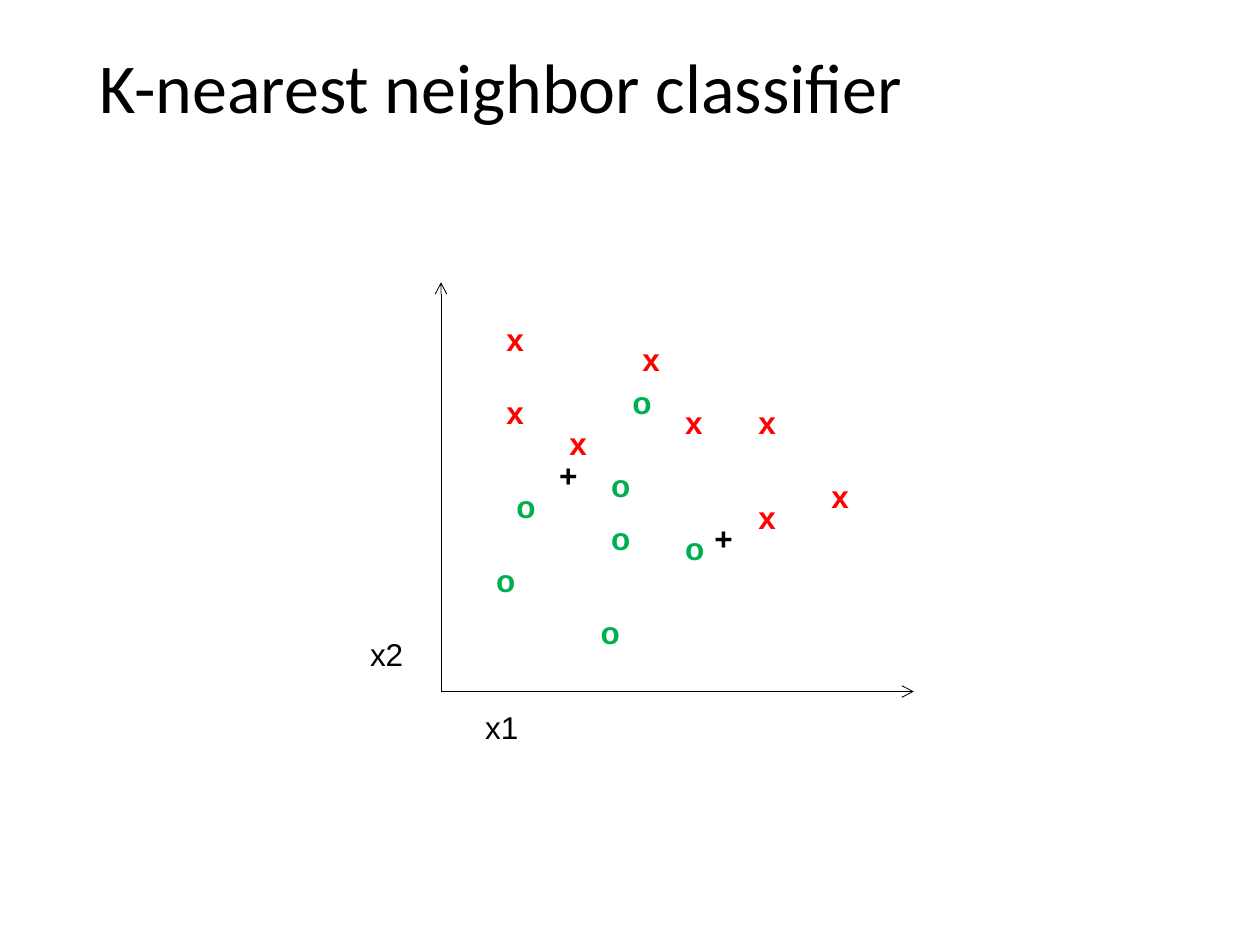
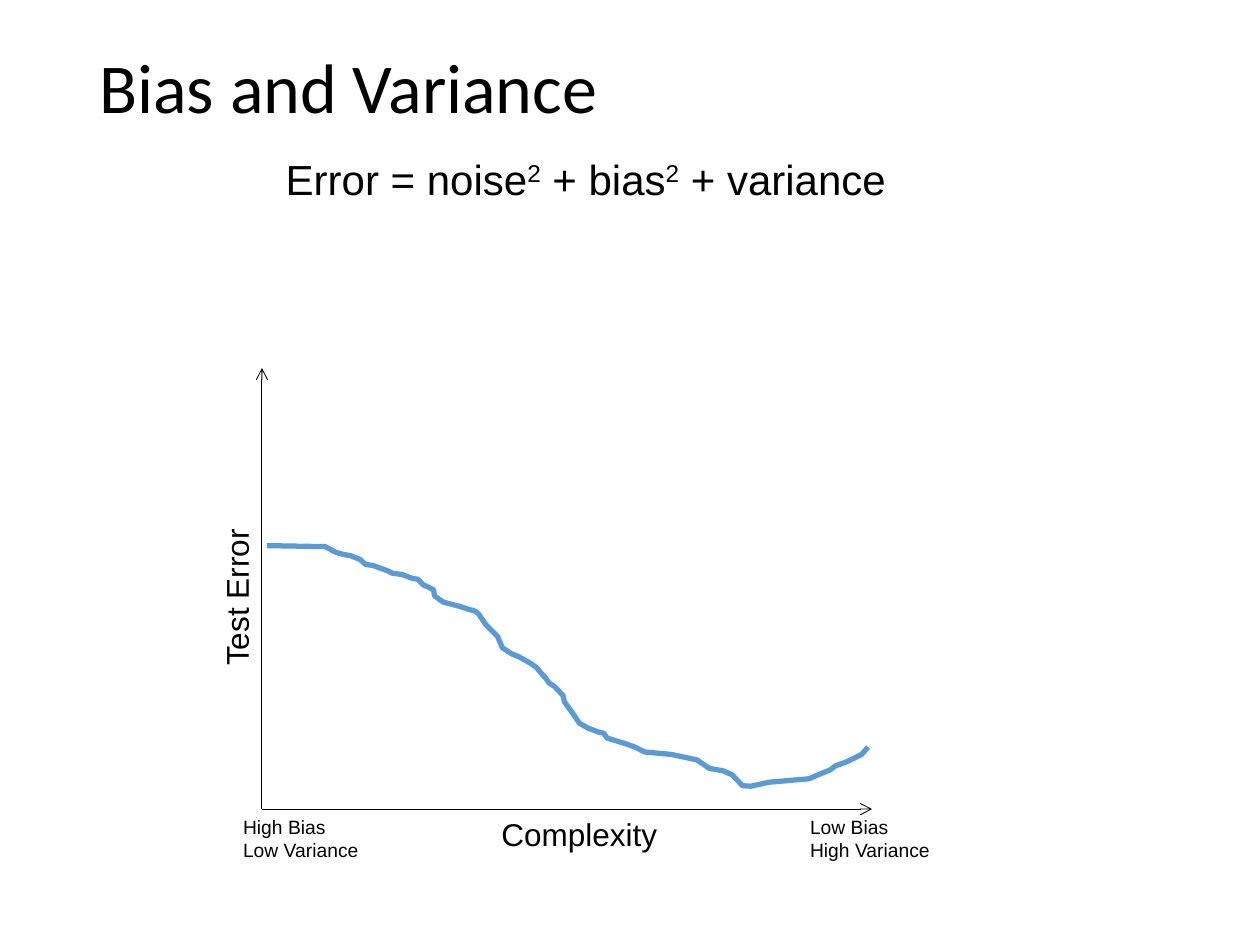
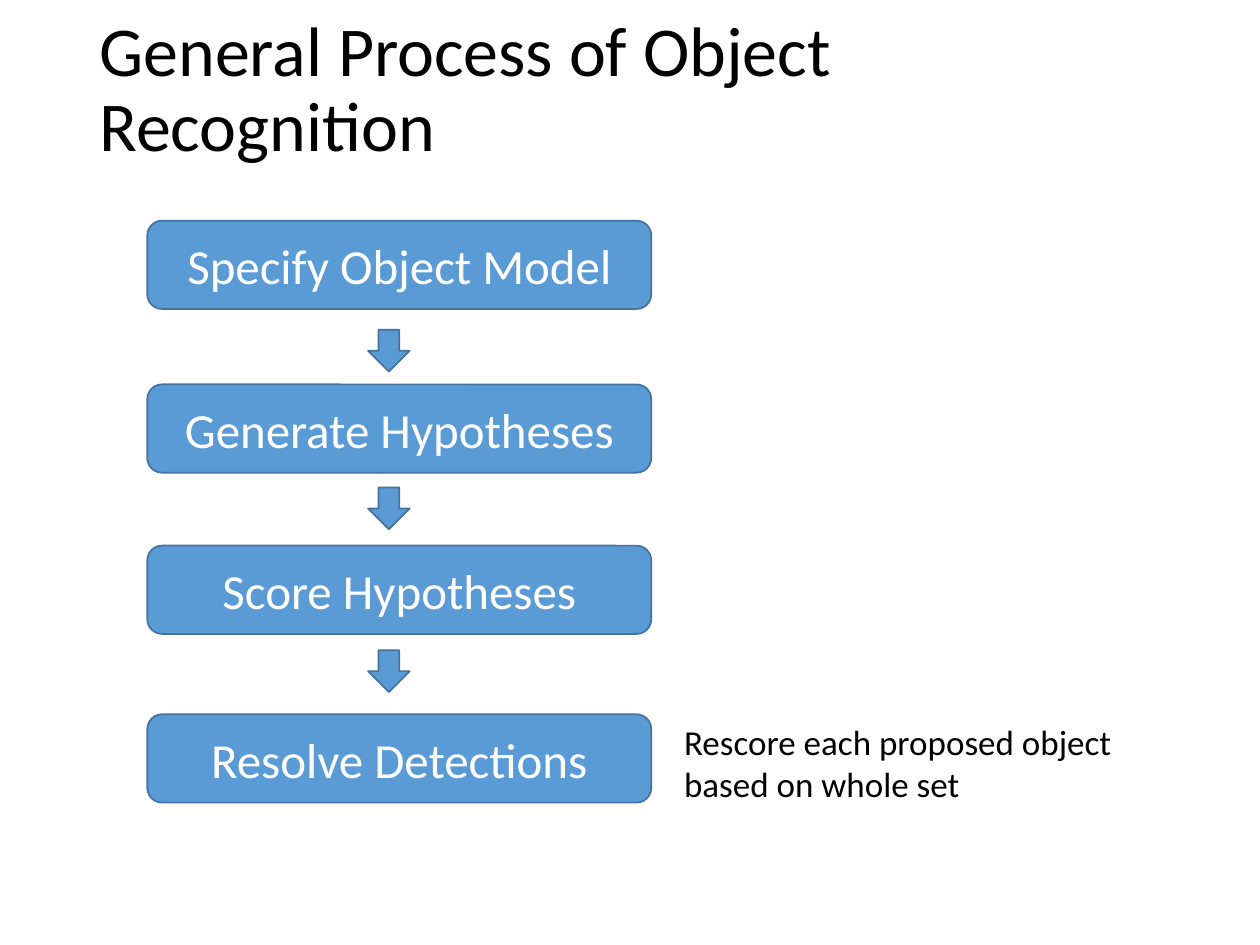
from pptx import Presentation
from pptx.dml.color import RGBColor
from pptx.enum.shapes import MSO_CONNECTOR, MSO_SHAPE
from pptx.enum.text import MSO_ANCHOR, MSO_AUTO_SIZE, PP_ALIGN
from pptx.oxml.ns import qn
from pptx.util import Cm, Pt
from lxml import etree

STRAIGHT = MSO_CONNECTOR.STRAIGHT
ROUNDED = MSO_SHAPE.ROUNDED_RECTANGLE
DOWN_ARROW = MSO_SHAPE.DOWN_ARROW
MIDDLE = MSO_ANCHOR.MIDDLE
LEFT, CENTER = PP_ALIGN.LEFT, PP_ALIGN.CENTER
NO_FIT, GROW = MSO_AUTO_SIZE.NONE, MSO_AUTO_SIZE.SHAPE_TO_FIT_TEXT

COLORS = {
    "text": "000000",
    "white": "FFFFFF",
    "cross": "FF0000",
    "circle": "00B050",
    "blue": "5B9BD5",
    "outline": "43739E",
}
HEADING_FONT, LABEL_FONT = "Calibri", "Arial"

CROSSES = [(13.56, 8), (15.04, 8), (15.04, 9.91), (16.51, 9.5),
           (9.96, 6.32), (9.96, 7.8), (12.7, 6.73), (11.23, 8.43)]
CIRCLES = [(12.5, 7.59), (13.56, 10.54), (9.75, 11.18), (10.16, 9.7),
           (11.86, 12.24), (12.07, 10.34), (12.07, 9.27)]
QUERIES = [(11.02, 9.07), (14.15, 10.34)]

ERROR_CURVE = [
    (5.38, 11), (6.55, 11.02), (6.65, 11.07), (6.76, 11.13), (6.93, 11.18),
    (7.06, 11.2), (7.26, 11.28), (7.37, 11.38), (7.52, 11.4), (7.82, 11.51),
    (7.92, 11.56), (8.1, 11.58), (8.31, 11.66), (8.43, 11.68), (8.53, 11.79),
    (8.64, 11.84), (8.74, 11.89), (8.76, 12.01), (8.84, 12.07), (8.94, 12.14),
    (9.25, 12.22), (9.47, 12.29), (9.58, 12.32), (9.65, 12.38), (9.8, 12.6),
    (10.03, 12.83), (10.13, 13.06), (10.31, 13.18), (10.44, 13.23),
    (10.64, 13.34), (10.72, 13.39), (10.82, 13.46), (10.9, 13.56), (11, 13.67),
    (11.07, 13.77), (11.18, 13.84), (11.35, 14.02), (11.38, 14.15),
    (11.51, 14.33), (11.58, 14.43), (11.68, 14.58), (11.86, 14.68),
    (12.07, 14.76), (12.17, 14.78), (12.24, 14.88), (12.6, 14.99),
    (12.8, 15.06), (13, 15.16), (13.54, 15.21), (14.05, 15.32), (14.3, 15.49),
    (14.58, 15.54), (14.76, 15.62), (14.97, 15.84), (15.14, 15.85),
    (15.5, 15.77), (16.31, 15.7), (16.54, 15.6), (16.74, 15.52),
    (16.84, 15.44), (17.04, 15.37), (17.25, 15.27), (17.37, 15.21), (17.5, 15.06),
]

STEPS = [("Specify Object Model", 4.45), ("Generate Hypotheses", 7.75),
         ("Score Hypotheses", 11), ("Resolve Detections", 14.4)]
ARROW_TOPS = [6.65, 9.83, 13.11]


class Deck:
    """Hold the shared style and the current slide, with a method per element."""

    def __init__(self):
        self.presentation = Presentation()
        self.presentation.slide_width = Cm(25.4)
        self.presentation.slide_height = Cm(19.05)
        self.slide = None

    def color(self, name):
        return RGBColor.from_string(COLORS[name])

    def style(self, paragraph, size, font, color="text", bold=False):
        paragraph.font.size = Pt(size)
        paragraph.font.name = font
        paragraph.font.bold = bold
        paragraph.font.color.rgb = self.color(color)

    def new_slide(self, title):
        layout = self.presentation.slide_layouts[5]
        self.slide = self.presentation.slides.add_slide(layout)
        shape = self.slide.shapes.title
        shape.left, shape.top = Cm(1.75), Cm(0)
        shape.width, shape.height = Cm(21.89), Cm(3.68)
        frame = shape.text_frame
        frame.text = title
        frame.auto_size = NO_FIT
        frame.vertical_anchor = MIDDLE
        paragraph = frame.paragraphs[0]
        paragraph.alignment = LEFT
        paragraph.line_spacing = 0.9
        self.style(paragraph, 40, HEADING_FONT)

    def text(self, lines, left, top, width, height=1.02, size=18,
             font=LABEL_FONT, color="text", bold=False, wrap=False):
        box = self.slide.shapes.add_textbox(Cm(left), Cm(top), Cm(width), Cm(height))
        frame = box.text_frame
        frame.text = lines
        frame.word_wrap = wrap
        frame.auto_size = GROW
        for paragraph in frame.paragraphs:
            self.style(paragraph, size, font, color, bold)
        return box

    def markers(self, symbol, places, width, color):
        for left, top in places:
            self.text(symbol, left, top, width, color=color, bold=True)

    def formula(self, parts, left, top, width, height):
        box = self.text("", left, top, width, height, size=24, wrap=True)
        for content, raised in parts:
            run = box.text_frame.paragraphs[0].add_run()
            run.text = content
            if raised:
                run._r.get_or_add_rPr().set("baseline", "30000")

    def axes(self, left, bottom, right, top):
        for end_x, end_y in ((left, top), (right, bottom)):
            connector = self.slide.shapes.add_connector(
                STRAIGHT, Cm(left), Cm(bottom), Cm(end_x), Cm(end_y))
            connector.line.color.rgb = self.color("text")
            connector.line.width = Pt(0.5)
            properties = connector._element.spPr
            etree.SubElement(properties.find(qn("a:ln")), qn("a:tailEnd"), type="arrow")
            etree.SubElement(properties, qn("a:effectLst"))

    def curve(self, points):
        start, *rest = [(round(x * 100), round(y * 100)) for x, y in points]
        builder = self.slide.shapes.build_freeform(*start, scale=Cm(0.01))
        builder.add_line_segments(rest, close=False)
        shape = builder.convert_to_shape()
        shape.shadow.inherit = False
        shape.fill.background()
        shape.line.color.rgb = self.color("blue")
        shape.line.width = Pt(3)

    def block(self, preset, left, top, width, height, label=""):
        shape = self.slide.shapes.add_shape(
            preset, Cm(left), Cm(top), Cm(width), Cm(height))
        shape.shadow.inherit = False
        shape.fill.solid()
        shape.fill.fore_color.rgb = self.color("blue")
        shape.line.color.rgb = self.color("outline")
        shape.line.width = Pt(1)
        if label:
            frame = shape.text_frame
            frame.text = label
            frame.vertical_anchor = MIDDLE
            frame.paragraphs[0].alignment = CENTER
            self.style(frame.paragraphs[0], 28, HEADING_FONT, "white")


def add_classifier(deck):
    deck.new_slide("K-nearest neighbor classifier")
    deck.markers("x", CROSSES, 0.86, "cross")
    deck.markers("o", CIRCLES, 0.91, "circle")
    deck.axes(8.89, 13.94, 18.42, 5.69)
    deck.text("x2", 7.21, 12.67, 1.19)
    deck.text("x1", 9.53, 14.15, 1.19)
    deck.markers("+", QUERIES, 0.89, "text")


def add_bias_variance(deck):
    deck.new_slide("Bias and Variance")
    deck.curve(ERROR_CURVE)
    axis_bottom = 16.31
    deck.axes(5.28, axis_bottom, 17.58, 7.42)
    deck.text("Complexity", 9.86, axis_bottom, 3.68)
    deck.text("Low Bias\nHigh Variance", 16.08, axis_bottom, 2.97, 1.19, size=11)
    deck.text("High Bias\nLow Variance", 4.65, axis_bottom, 2.9, 1.19, size=11)
    deck.text("Test Error", 3.12, 11.51, 3.3).rotation = 270
    deck.formula([("Error = noise", False), ("2", True), (" + bias", False),
                  ("2", True), (" + variance", False)], 5.51, 2.97, 12.7, 1.3)


def add_recognition_process(deck):
    deck.new_slide("General Process of Object Recognition")
    for label, top in STEPS:
        deck.block(ROUNDED, 2.97, top, 10.16, 1.78, label)
    for top in ARROW_TOPS:
        deck.block(DOWN_ARROW, 7.42, top, 0.84, 0.84)
    deck.text("Rescore each proposed object based on whole set", 13.54, 14.4,
              9.96, 1.96, size=20, font=HEADING_FONT, wrap=True)


def main():
    deck = Deck()
    add_classifier(deck)
    add_bias_variance(deck)
    add_recognition_process(deck)
    deck.presentation.save("out.pptx")


if __name__ == "__main__":
    main()
